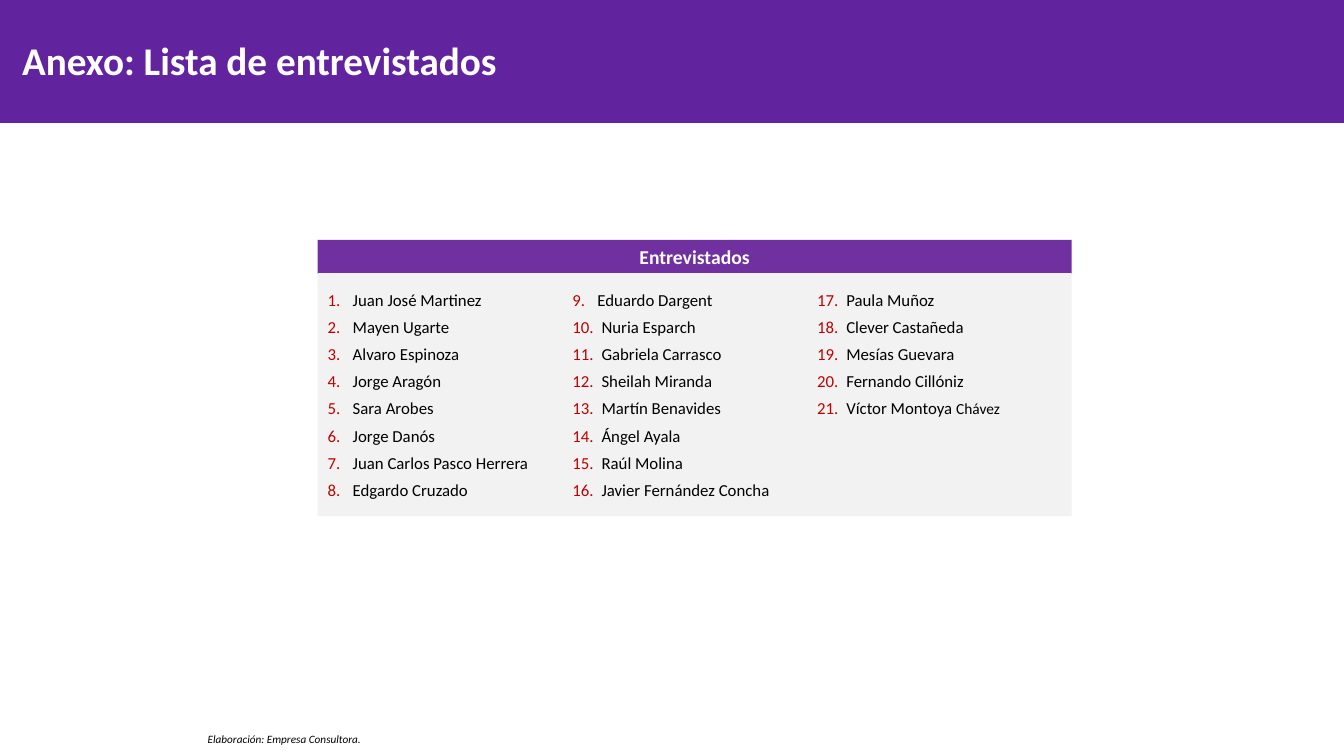
from dataclasses import dataclass

from lxml.etree import SubElement
from pptx import Presentation
from pptx.dml.color import RGBColor
from pptx.enum.shapes import MSO_SHAPE
from pptx.enum.text import MSO_ANCHOR, PP_ALIGN
from pptx.oxml.ns import qn
from pptx.shapes.autoshape import Shape
from pptx.slide import Slide
from pptx.text.text import Font, TextFrame, _Paragraph
from pptx.util import Inches, Pt

FONT = "Calibri"
BLACK, WHITE = "000000", "FFFFFF"
NUMBER_RED = "C00000"
INTERVIEWEES = [
    "Juan José Martinez", "Mayen Ugarte", "Alvaro Espinoza", "Jorge Aragón",
    "Sara Arobes", "Jorge Danós", "Juan Carlos Pasco Herrera", "Edgardo Cruzado",
    "Eduardo Dargent", "Nuria Esparch", "Gabriela Carrasco", "Sheilah Miranda",
    "Martín Benavides", "Ángel Ayala", "Raúl Molina", "Javier Fernández Concha",
    "Paula Muñoz", "Clever Castañeda", "Mesías Guevara", "Fernando Cillóniz",
    "Víctor Montoya ",
]
LAST_SURNAME = "Chávez"


@dataclass
class Box:
    left: float
    top: float
    width: float
    height: float

    def lengths(self) -> list[int]:
        return [Inches(v) for v in (self.left, self.top, self.width, self.height)]


@dataclass
class Label:
    text: str
    box: Box
    size: float
    color: str
    margins: tuple[float, float, float, float]
    anchor: MSO_ANCHOR = MSO_ANCHOR.MIDDLE
    align: PP_ALIGN = PP_ALIGN.LEFT
    bold: bool = False
    italic: bool = False
    fill: str | None = None
    line_spacing: float | None = None


def rgb(color: str) -> RGBColor:
    return RGBColor.from_string(color)


def style_font(font: Font, size: float, color: str, bold: bool = False, italic: bool = False) -> None:
    font.name, font.size = FONT, Pt(size)
    font.bold, font.italic = bold, italic
    font.color.rgb = rgb(color)


def set_frame(frame: TextFrame, margins: tuple[float, float, float, float], anchor: MSO_ANCHOR) -> None:
    frame.word_wrap = True
    frame.vertical_anchor = anchor
    frame.margin_left, frame.margin_top, frame.margin_right, frame.margin_bottom = map(Inches, margins)


def add_panel(slide: Slide, box: Box, fill: str) -> Shape:
    panel = slide.shapes.add_shape(MSO_SHAPE.RECTANGLE, *box.lengths())
    panel.shadow.inherit = False
    panel.fill.solid()
    panel.fill.fore_color.rgb = rgb(fill)
    panel.line.fill.background()
    return panel


def add_label(slide: Slide, label: Label) -> None:
    if label.fill:
        shape = add_panel(slide, label.box, label.fill)
    else:
        shape = slide.shapes.add_textbox(*label.box.lengths())
    frame = shape.text_frame
    set_frame(frame, label.margins, label.anchor)
    frame.text = label.text
    paragraph = frame.paragraphs[0]
    paragraph.alignment = label.align
    paragraph.line_spacing = label.line_spacing
    style_font(paragraph.runs[0].font, label.size, label.color, label.bold, label.italic)


def number_paragraph(paragraph: _Paragraph, indent: float) -> None:
    properties = paragraph._p.get_or_add_pPr()
    properties.set("marL", str(Inches(indent)))
    properties.set("indent", str(-Inches(indent)))
    number_color = SubElement(properties, qn("a:buClr"))
    SubElement(number_color, qn("a:srgbClr"), val=NUMBER_RED)
    SubElement(properties, qn("a:buFont"), typeface="+mj-lt")
    SubElement(properties, qn("a:buAutoNum"), type="arabicPeriod")


def add_interviewees(slide: Slide, box: Box) -> None:
    frame = add_panel(slide, box, "F2F2F2").text_frame
    set_frame(frame, (0.1, 0.05, 0.1, 0.05), MSO_ANCHOR.MIDDLE)
    frame._txBody.bodyPr.set("numCol", "3")
    frame.text = "\n".join(INTERVIEWEES)
    for number, paragraph in enumerate(frame.paragraphs, start=1):
        paragraph.alignment = PP_ALIGN.LEFT
        paragraph.space_after = Pt(5)
        # Two-digit numbers need a little more room
        number_paragraph(paragraph, 0.25 if number < 10 else 0.29)
        style_font(paragraph.runs[0].font, 12, BLACK)
    surname = frame.paragraphs[-1].add_run()
    surname.text = LAST_SURNAME
    style_font(surname.font, 11, BLACK)


def main() -> None:
    presentation = Presentation()
    presentation.slide_width, presentation.slide_height = Inches(13.33), Inches(7.5)
    slide = presentation.slides.add_slide(presentation.slide_layouts[6])

    # Source note
    add_label(slide, Label("Elaboración: Empresa Consultora.", Box(2.06, 7, 10.8, 0.5), 8, BLACK,
                           (0, 0.05, 0, 0.1), anchor=MSO_ANCHOR.BOTTOM, italic=True))

    # List of interviewees under its heading
    add_label(slide, Label("Entrevistados", Box(3.15, 2.38, 7.48, 0.34), 14, WHITE,
                           (0.08, 0.08, 0.08, 0.08), align=PP_ALIGN.CENTER, bold=True, fill="7030A0"))
    add_interviewees(slide, Box(3.15, 2.71, 7.48, 2.41))

    # Title band
    add_panel(slide, Box(0, -0.01, 13.33, 1.23), "62239F")
    add_label(slide, Label("Anexo: Lista de entrevistados", Box(0.22, 0.35, 12.67, 0.54), 28, WHITE,
                           (0, 0.05, 0.1, 0.05), align=PP_ALIGN.JUSTIFY, bold=True, line_spacing=0.9))

    presentation.save("out.pptx")


if __name__ == "__main__":
    main()
